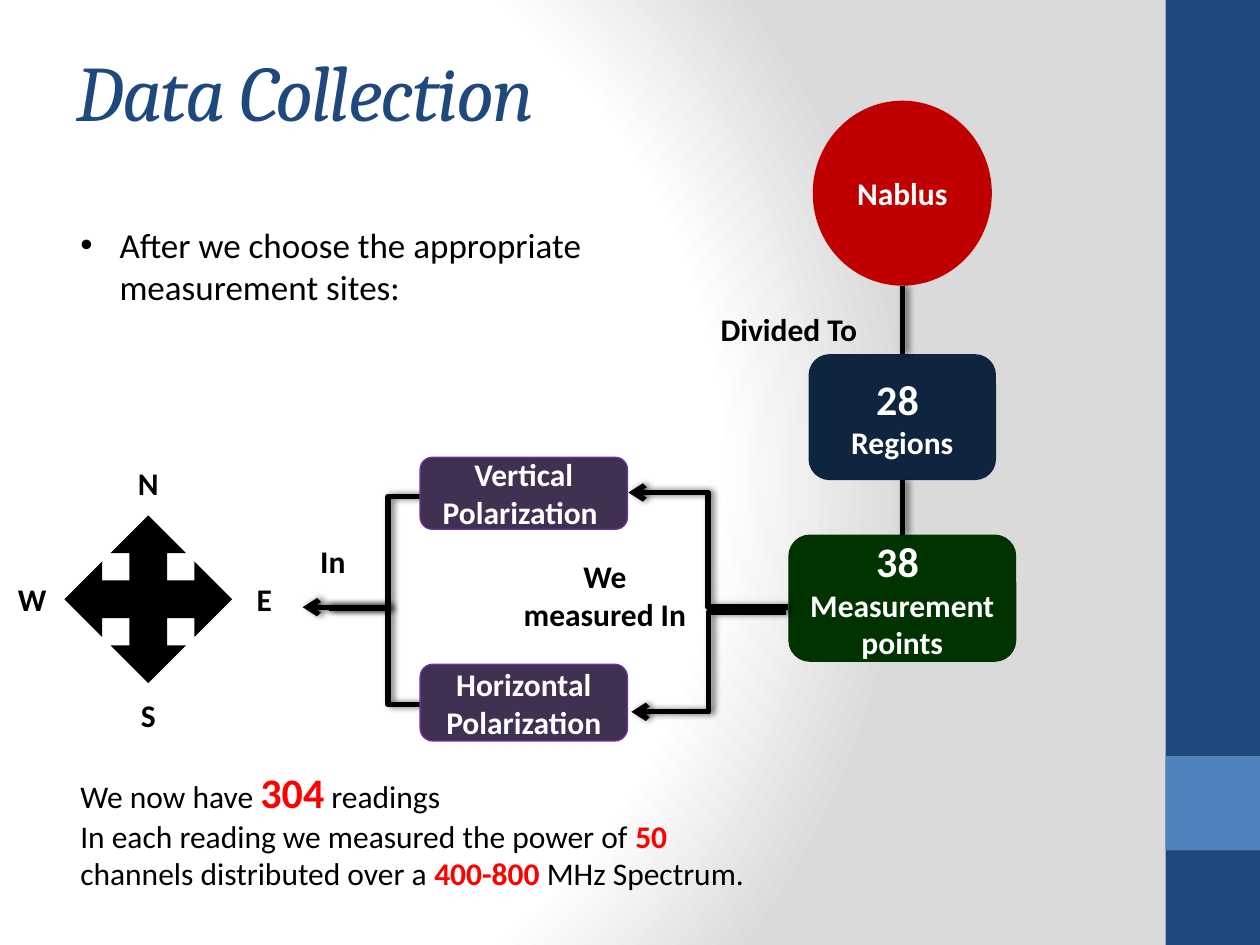
from pptx import Presentation
from pptx.dml.color import RGBColor
from pptx.enum.shapes import MSO_CONNECTOR, MSO_SHAPE
from pptx.enum.text import MSO_ANCHOR, PP_ALIGN
from pptx.oxml import parse_xml
from pptx.oxml.ns import nsdecls, qn
from pptx.util import Cm, Pt

WHITE = RGBColor(0xFF, 0xFF, 0xFF)
BLACK = RGBColor(0, 0, 0)
NAVY = RGBColor(0x1F, 0x49, 0x7D)
BLUE = RGBColor(0x4F, 0x81, 0xBD)
DARK_NAVY = RGBColor(0x0F, 0x24, 0x3E)
CRIMSON = RGBColor(0xC0, 0, 0)
RED = RGBColor(0xFF, 0, 0)
GREEN = RGBColor(0, 0x33, 0)
PLUM = RGBColor(0x40, 0x31, 0x52)
PURPLE = RGBColor(0x70, 0x30, 0xA0)

RECT, ROUND = MSO_SHAPE.RECTANGLE, MSO_SHAPE.ROUNDED_RECTANGLE
OVAL, QUAD_ARROW = MSO_SHAPE.OVAL, MSO_SHAPE.QUAD_ARROW
STRAIGHT, ELBOW = MSO_CONNECTOR.STRAIGHT, MSO_CONNECTOR.ELBOW
CENTER, MIDDLE = PP_ALIGN.CENTER, MSO_ANCHOR.MIDDLE

GRADIENT = f"""<a:gradFill {nsdecls('a')} rotWithShape="1"><a:gsLst>
<a:gs pos="0"><a:srgbClr val="FFFFFF"/></a:gs>
<a:gs pos="75000"><a:srgbClr val="FFFFFF"/></a:gs>
<a:gs pos="100000"><a:srgbClr val="DADADA"/></a:gs></a:gsLst>
<a:path path="circle"><a:fillToRect l="20000" t="50000" r="100000" b="50000"/></a:path>
</a:gradFill>"""
SHADOW = f"""<a:effectLst {nsdecls('a')}>
<a:outerShdw blurRad="50800" dist="25400" dir="0" rotWithShape="0">
<a:srgbClr val="000000"><a:alpha val="60000"/></a:srgbClr></a:outerShdw></a:effectLst>"""


def style(r, size, color=BLACK, bold=False, font="Calibri"):
    """Format one run."""
    r.font.name, r.font.size, r.font.bold = font, Pt(size), bold
    r.font.color.rgb = color


def add_block(s, kind, box, fill, lines=(), line=None):
    """Add a filled shape with centred bold (text, size) lines."""
    sp = s.shapes.add_shape(kind, *map(Cm, box))
    sp.shadow.inherit = False
    sp.fill.solid()
    sp.fill.fore_color.rgb = fill
    if line is None:
        sp.line.fill.background()
    else:
        sp.line.color.rgb = line
        sp.line.width = Pt(0.75)
    tf = sp.text_frame
    tf.vertical_anchor = MIDDLE
    tf.text = "\n".join(text for text, _ in lines)
    for p, (_, size) in zip(tf.paragraphs, lines):
        p.alignment = CENTER
        for r in p.runs:
            style(r, size, WHITE, True)
    return sp


def add_text(s, box):
    """Add an empty wrapping text box and return its frame."""
    tf = s.shapes.add_textbox(*map(Cm, box)).text_frame
    tf.word_wrap = True
    return tf


def add_label(s, text, x, y, w=1.88, h=1.02):
    """Add a centred bold label."""
    p = add_text(s, (x, y, w, h)).paragraphs[0]
    p.text = text
    p.alignment = CENTER
    style(p.runs[0], 18, bold=True)


def add_line(s, kind, start, end, arrow=False):
    """Add a black shadowed connector, with an arrowhead at its end if asked."""
    c = s.shapes.add_connector(kind, *map(Cm, start + end))
    c.line.color.rgb = BLACK
    c.line.width = Pt(3)
    if arrow:
        c.line._get_or_add_ln().append(parse_xml(f'<a:tailEnd {nsdecls("a")} type="arrow"/>'))
    c._element.spPr.append(parse_xml(SHADOW))
    return c


def add_backdrop(s, box):
    """Paint the background gradient and the side bar."""
    s.background.fill.solid()
    solid = s.element.find(".//" + qn("p:bgPr")).find(qn("a:solidFill"))
    solid.getparent().replace(solid, parse_xml(GRADIENT))
    x, y, w, h = box
    add_block(s, RECT, box, NAVY)
    add_block(s, RECT, (x, y + 0.8 * h, w, h / 10), BLUE)


def add_title(s, box):
    """Add the slide title."""
    p = add_text(s, box).paragraphs[0]
    p.text = "Data Collection"
    r = p.runs[0]
    style(r, 44.9, NAVY, font="Cambria")
    r.font.italic = True
    r._r.get_or_add_rPr().set("spc", "-100")


def add_intro(s, box):
    """Add the bulleted opening sentence."""
    p = add_text(s, box).paragraphs[0]
    p.text = "After we choose the appropriate measurement sites:"
    style(p.runs[0], 20)
    pPr = p._p.get_or_add_pPr()
    pPr.set("marL", str(Cm(0.79)))
    pPr.set("indent", str(-Cm(0.79)))
    pPr.append(parse_xml(f'<a:buFont {nsdecls("a")} typeface="Arial"/>'))
    pPr.append(parse_xml(f'<a:buChar {nsdecls("a")} char="•"/>'))


def add_division(s, box):
    """Add the column from city to regions to measurement points."""
    x, y, w, h = box
    mid = x + 4.19

    def centred(kind, top, bw, bh, fill, lines, line=None):
        return add_block(s, kind, (mid - bw / 2, y + top, bw, bh), fill, lines, line)

    centred(OVAL, 0, 3.61, 3.73, CRIMSON, [("Nablus", 18)])
    regions = centred(ROUND, 5.11, 3.78, 2.54, DARK_NAVY, [("28 ", 24), ("Regions", 18)])
    points = centred(ROUND, h - 2.54, 4.57, 2.54, GREEN,
                     [("38 ", 24), ("Measurement", 18), ("points", 18)], GREEN)
    add_line(s, STRAIGHT, (mid, y + 3.73), (mid, y + 5.11)).end_connect(regions, 0)
    c = add_line(s, STRAIGHT, (mid, y + 7.65), (mid, y + h - 2.54))
    c.begin_connect(regions, 2)
    c.end_connect(points, 0)
    add_label(s, "Divided To", x, y + 4.09, 3.81)


def add_polarizations(s, box):
    """Add the two polarization boxes with the forks on both sides."""
    x, y, w, h = box
    forks = [(ELBOW, (9.75, 3.12), (6.63, 5.13)), (ELBOW, (9.78, 3.02), (6.57, 0.71)),
             (ELBOW, (0.45, 3.02), (2.99, 4.98)), (ELBOW, (0.53, 3.05), (2.92, 0.79)),
             (STRAIGHT, (1.72, 3.02), (0, 3.02))]
    for kind, (x1, y1), (x2, y2) in forks:
        add_line(s, kind, (x + x1, y + y1), (x + x2, y + y2), True)
    add_label(s, "We measured In", x + 4.19, y + 1.88, 3.81, 1.8)
    add_label(s, "In", x - 0.33, y + 1.58)
    for top, bh, name, last in ((0, 1.45, "Vertical", "Polarization "),
                                (h - 1.55, 1.55, "Horizontal", "Polarization")):
        add_block(s, ROUND, (x + 2.37, y + top, 4.18, bh), PLUM,
                  [(name, 18), (last, 18)], PURPLE)


def add_compass(s, box):
    """Add the four-way arrow with its compass letters."""
    x, y, w, h = box
    add_block(s, QUAD_ARROW, box, BLACK)
    reach = 2.34
    for text, dx, dy in (("N", 0, -1), ("E", 1, 0), ("S", 0, 1), ("W", -1, 0)):
        add_label(s, text, x + w / 2 + dx * reach - 0.94, y + h / 2 + dy * reach - 0.51)


def add_summary(s, box):
    """Add the closing sentences with red figures."""
    tf = add_text(s, box)
    sentences = [[("We now have ", 0), ("304", 24), (" readings", 0)],
                 [("In each reading we measured the power of ", 0), ("50", 18),
                  (" channels distributed over a ", 0), ("400-800", 18),
                  (" MHz Spectrum.", 0)]]
    for i, parts in enumerate(sentences):
        p = tf.add_paragraph() if i else tf.paragraphs[0]
        for text, size in parts:
            r = p.add_run()
            r.text = text
            style(r, size or 18, RED if size else BLACK, size > 0)


def main():
    """Build and save the slide."""
    prs = Presentation()
    prs.slide_width, prs.slide_height = Cm(25.4), Cm(19.05)
    s = prs.slides.add_slide(prs.slide_layouts[6])
    add_backdrop(s, (23.5, 0, 1.9, 19.05))
    add_title(s, (1.3, 0.74, 22.86, 3.18))
    add_intro(s, (1.37, 4.39, 14.2, 4.27))
    add_division(s, (14, 2.03, 6.48, 11.3))
    add_polarizations(s, (6.1, 9.22, 9.8, 5.72))
    add_compass(s, (1.3, 10.39, 3.38, 3.38))
    add_summary(s, (1.37, 15.32, 14.2, 3.58))
    prs.save("out.pptx")


if __name__ == "__main__":
    main()
